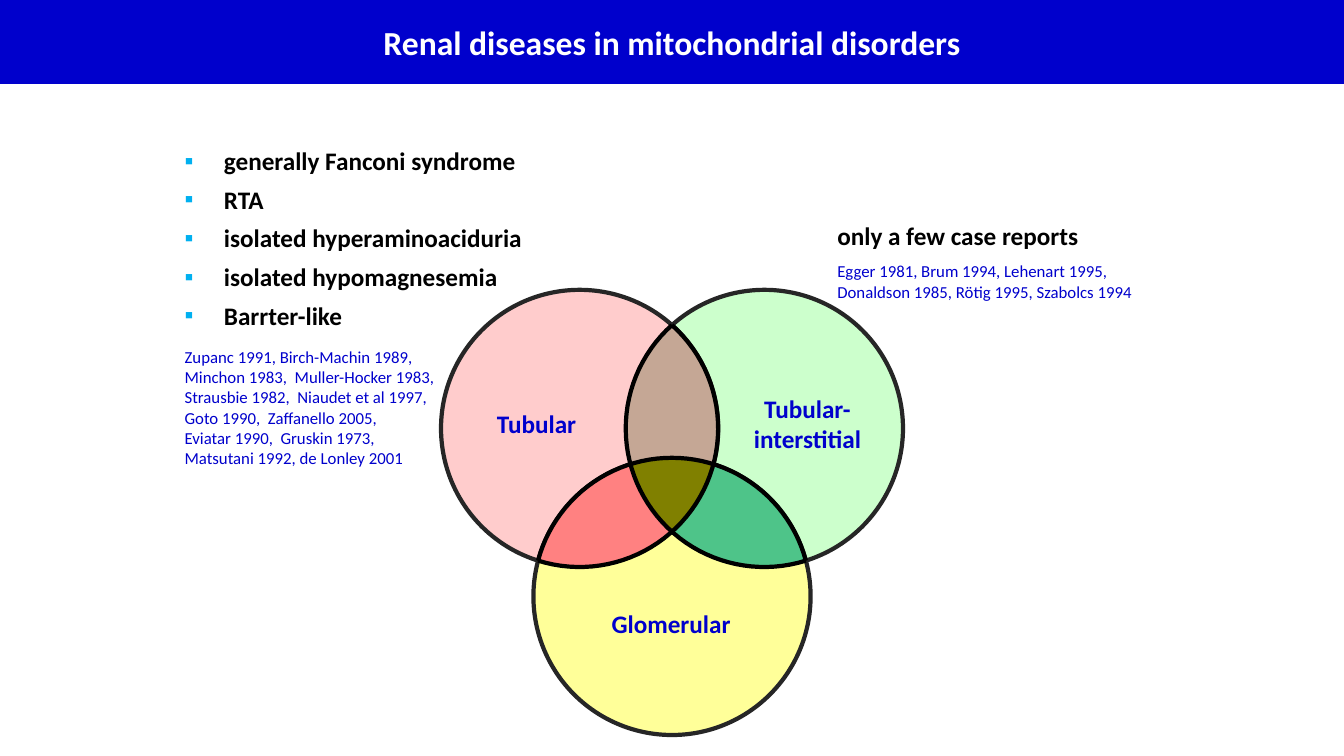
from copy import deepcopy
from dataclasses import dataclass
from math import atan2, cos, dist, hypot, pi, sin

from lxml.etree import SubElement
from pptx import Presentation
from pptx.dml.color import RGBColor
from pptx.enum.shapes import MSO_SHAPE
from pptx.enum.text import MSO_ANCHOR, PP_ALIGN
from pptx.oxml.ns import qn
from pptx.util import Inches, Pt

COLUMNS, ROWS = 160, 90
BLUE, BLACK, WHITE = "0000CC", "000000", "FFFFFF"
TUBULAR_NOTES = [
    "generally Fanconi syndrome",
    "RTA",
    "isolated hyperaminoaciduria",
    "isolated hypomagnesemia",
    "Barrter-like",
]
TUBULAR_SOURCES = (
    "Zupanc 1991, Birch-Machin 1989, \v"
    "Minchon 1983,  Muller-Hocker 1983, \v"
    "Strausbie 1982,  Niaudet et al 1997, \v"
    "Goto 1990,  Zaffanello 2005, \v"
    "Eviatar 1990,  Gruskin 1973, \v"
    "Matsutani 1992, de Lonley 2001"
)
INTERSTITIAL_SOURCES = (
    "Egger 1981, Brum 1994, Lehenart 1995, \v"
    "Donaldson 1985, Rötig 1995, Szabolcs 1994"
)


@dataclass
class Box:
    left: float
    top: float
    width: float
    height: float

    def inner(self, left, top, width, height):
        return Box(self.left + left, self.top + top, width, height)

    def lengths(self):
        return [grid(n) for n in (self.left, self.top, self.width, self.height)]


@dataclass
class Circle:
    x: float
    y: float
    radius: float


def grid(units):
    return Inches(units / 12)


def color(value):
    return RGBColor.from_string(value)


def paint(shape, fill=None, line=None, weight=3):
    shape.shadow.inherit = False
    if fill:
        shape.fill.solid()
        shape.fill.fore_color.rgb = color(fill)
    else:
        shape.fill.background()
    if line:
        shape.line.color.rgb = color(line)
        shape.line.width = Pt(weight)
    else:
        shape.line.fill.background()


def add_bullet(para):
    properties = para._p.get_or_add_pPr()
    properties.set("marL", str(Inches(0.39)))
    properties.set("indent", str(-Inches(0.39)))
    tint = SubElement(properties, qn("a:buClr"))
    SubElement(tint, qn("a:srgbClr")).set("val", "00B0F0")
    SubElement(properties, qn("a:buFont")).set("typeface", "Arial")
    SubElement(properties, qn("a:buChar")).set("char", "▪")


def write(frame, lines, size=18, ink=BLUE, bold=True, align=PP_ALIGN.LEFT,
          bullet=False, gap=0):
    for index, line in enumerate(lines):
        para = frame.add_paragraph() if index else frame.paragraphs[0]
        para.alignment = align
        if index and gap:
            para.space_before = Pt(gap)
        if bullet:
            add_bullet(para)
        para.text = line
        for span in para.runs:
            span.font.name = "Calibri"
            span.font.size = Pt(size)
            span.font.bold = bold
            span.font.color.rgb = color(ink)
        for line_break in para._p.findall(qn("a:br")):
            line_break.append(deepcopy(para.runs[0]._r.rPr))


def add_text(page, box, lines, wrap=True, **style):
    frame = page.shapes.add_textbox(*box.lengths()).text_frame
    frame.word_wrap = wrap
    write(frame, lines, **style)


def crossings(first, second, third):
    across, down = second.x - first.x, second.y - first.y
    gap = hypot(across, down)
    reach = (first.radius ** 2 - gap ** 2 / 4) ** 0.5
    middle = (first.x + across / 2, first.y + down / 2)
    points = [(middle[0] - side * reach * down / gap,
               middle[1] + side * reach * across / gap) for side in (-1, 1)]
    return sorted(points, key=lambda point: dist(point, (third.x, third.y)))


def arc(circle, start, end, steps=48):
    first = atan2(start[1] - circle.y, start[0] - circle.x)
    last = atan2(end[1] - circle.y, end[0] - circle.x)
    sweep = (last - first + pi) % (2 * pi) - pi
    angles = [first + sweep * step / steps for step in range(steps + 1)]
    return [(circle.x + circle.radius * cos(angle),
             circle.y + circle.radius * sin(angle)) for angle in angles]


def add_outline(page, points, fill=None, weight=3):
    start, *rest = [(grid(x), grid(y)) for x, y in points]
    builder = page.shapes.build_freeform(*start, scale=1.0)
    builder.add_line_segments(rest, close=fill is not None)
    paint(builder.convert_to_shape(), fill, BLACK, weight)


def add_circle(page, box, fill):
    paint(page.shapes.add_shape(MSO_SHAPE.OVAL, *box.lengths()), fill, "262626")
    radius = box.width / 2
    return Circle(box.left + radius, box.top + radius, radius)


def add_venn(page, box):
    size = 0.6 * box.width
    interstitial = add_circle(page, box.inner(box.width - size, 0, size, size), "CCFFCC")
    tubular = add_circle(page, box.inner(0, 0, size, size), "FFCCCC")
    glomerular = add_circle(
        page, box.inner((box.width - size) / 2, box.height - size, size, size), "FFFF99")

    low, top = crossings(tubular, interstitial, glomerular)
    right, far_left = crossings(tubular, glomerular, interstitial)
    left, far_right = crossings(interstitial, glomerular, tubular)
    overlaps = [
        ("4EC489", (glomerular, far_right, right), (tubular, right, low),
         (interstitial, low, far_right)),
        ("808000", (glomerular, left, right), (tubular, right, low),
         (interstitial, low, left)),
        ("FF8181", (glomerular, far_left, left), (interstitial, left, low),
         (tubular, low, far_left)),
        ("C5A795", (tubular, top, right), (glomerular, right, left),
         (interstitial, left, top)),
    ]
    for fill, *edges in overlaps:
        add_outline(page, [point for edge in edges for point in arc(*edge)], fill, 0.75)
    for edge in [(glomerular, far_left, far_right), (tubular, top, far_left),
                 (interstitial, far_right, top)]:
        add_outline(page, arc(*edge))

    for lines, place in [
        (["Tubular"], (5.25, 13.5, 12.25, 4.8)),
        (["Tubular-", "interstitial"], (35.7, 11.7, 15.85, 8.5)),
        (["Glomerular"], (18.9, 37.3, 17, 4.8)),
    ]:
        add_text(page, box.inner(*place), lines, wrap=False, align=PP_ALIGN.CENTER)


def add_title(page, box):
    banner = page.shapes.add_shape(MSO_SHAPE.RECTANGLE, *box.lengths())
    paint(banner, BLUE)
    banner.text_frame.vertical_anchor = MSO_ANCHOR.MIDDLE
    write(banner.text_frame, ["Renal diseases in mitochondrial disorders"],
          size=24, ink=WHITE, align=PP_ALIGN.CENTER)


def add_tubular_notes(page, box):
    add_text(page, box.inner(0, 0, 47, 23.4), TUBULAR_NOTES, ink=BLACK, bullet=True, gap=6)
    add_text(page, box.inner(0, 24, box.width, 15.7), [TUBULAR_SOURCES], size=12, bold=False)


def add_interstitial_notes(page, box):
    add_text(page, box.inner(0, 0, box.width, 4.8), ["only a few case reports"], ink=BLACK)
    add_text(page, box.inner(0, 4.9, box.width, 6), [INTERSTITIAL_SOURCES], size=12, bold=False)


def main():
    deck = Presentation()
    deck.slide_width, deck.slide_height = grid(COLUMNS), grid(ROWS)
    page = deck.slides.add_slide(deck.slide_layouts[6])
    add_venn(page, Box(52.5, 34.5, 55, 53))
    add_title(page, Box(0, 0, COLUMNS, 10))
    add_tubular_notes(page, Box(20.8, 16.7, 60, 39.7))
    add_interstitial_notes(page, Box(98.5, 25.6, 39.7, 10.9))
    deck.save("out.pptx")


if __name__ == "__main__":
    main()
